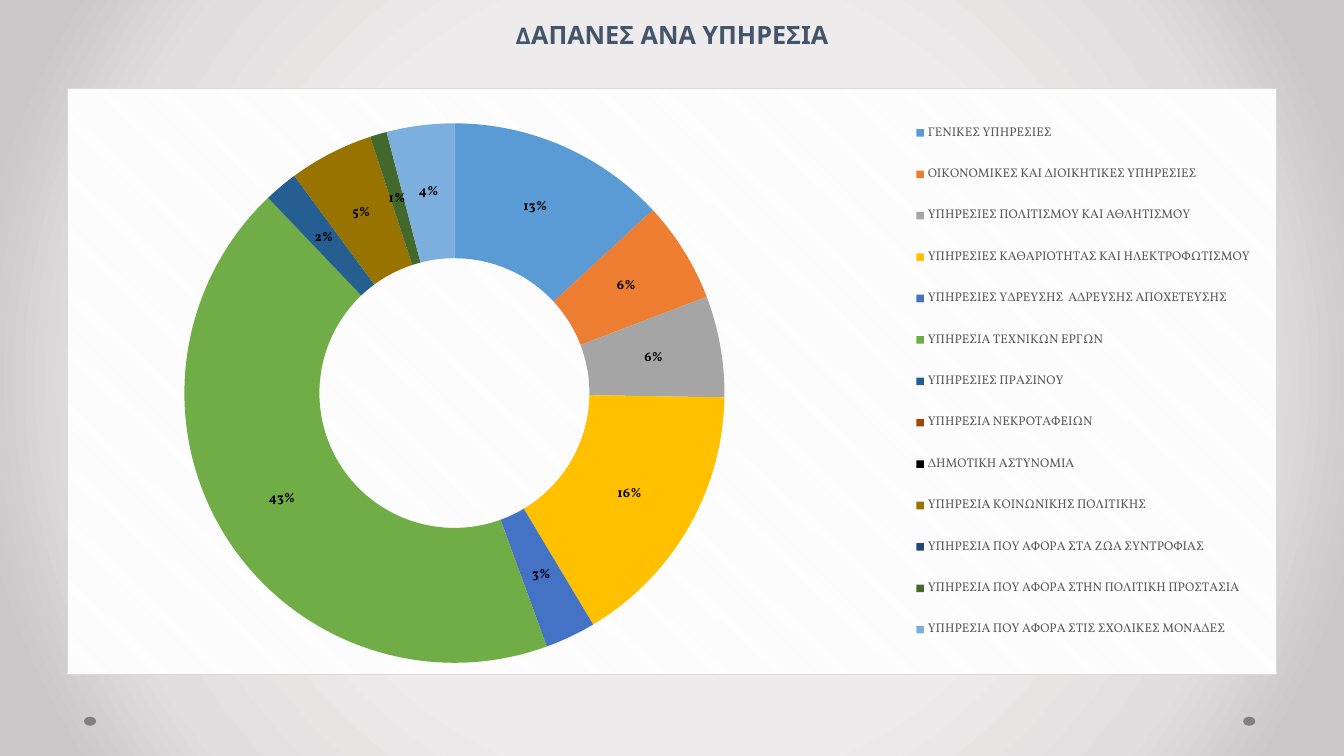
from lxml import etree
from pptx import Presentation
from pptx import util as u
from pptx.chart.data import CategoryChartData
from pptx.dml.color import RGBColor
from pptx.enum import chart as ch, shapes, text
from pptx.oxml import ns, parse_xml

SERVICES = [
    ("ΓΕΝΙΚΕΣ ΥΠΗΡΕΣΙΕΣ", 13, "5B9BD5"),
    ("ΟΙΚΟΝΟΜΙΚΕΣ ΚΑΙ ΔΙΟΙΚΗΤΙΚΕΣ ΥΠΗΡΕΣΙΕΣ", 6, "ED7D31"),
    ("ΥΠΗΡΕΣΙΕΣ ΠΟΛΙΤΙΣΜΟΥ ΚΑΙ ΑΘΛΗΤΙΣΜΟΥ", 6, "A5A5A5"),
    ("ΥΠΗΡΕΣΙΕΣ ΚΑΘΑΡΙΟΤΗΤΑΣ ΚΑΙ ΗΛΕΚΤΡΟΦΩΤΙΣΜΟΥ", 16, "FFC000"),
    ("ΥΠΗΡΕΣΙΕΣ ΥΔΡΕΥΣΗΣ  ΑΔΡΕΥΣΗΣ ΑΠΟΧΕΤΕΥΣΗΣ", 3, "4472C4"),
    ("ΥΠΗΡΕΣΙΑ ΤΕΧΝΙΚΩΝ ΕΡΓΩΝ", 43, "70AD47"),
    ("ΥΠΗΡΕΣΙΕΣ ΠΡΑΣΙΝΟΥ", 2, "255E91"),
    ("ΥΠΗΡΕΣΙΑ ΝΕΚΡΟΤΑΦΕΙΩΝ", 0, "9E480E"),
    ("ΔΗΜΟΤΙΚΗ ΑΣΤΥΝΟΜΙΑ", 0, "000000"),
    ("ΥΠΗΡΕΣΙΑ ΚΟΙΝΩΝΙΚΗΣ ΠΟΛΙΤΙΚΗΣ", 5, "997300"),
    ("ΥΠΗΡΕΣΙΑ ΠΟΥ ΑΦΟΡΑ ΣΤΑ ΖΩΑ ΣΥΝΤΡΟΦΙΑΣ", 0, "264478"),
    ("ΥΠΗΡΕΣΙΑ ΠΟΥ ΑΦΟΡΑ ΣΤΗΝ ΠΟΛΙΤΙΚΗ ΠΡΟΣΤΑΣΙΑ", 1, "43682B"),
    ("ΥΠΗΡΕΣΙΑ ΠΟΥ ΑΦΟΡΑ ΣΤΙΣ ΣΧΟΛΙΚΕΣ ΜΟΝΑΔΕΣ", 4, "7CAFDD"),
]


def color(value):
    return RGBColor.from_string(value)


def xml(tag, body):
    return parse_xml(f'<{tag} {ns.nsdecls("a", "c", "p")}>{body}</{tag}>')


def fill_xml(value):
    return f'<a:srgbClr val="{value}"/>'


def manual_layout(x, y, w, h, inner=False):
    """Chart layout element; lengths are shares of the chart area."""
    target = '<c:layoutTarget val="inner"/>' if inner else ""
    modes = '<c:xMode val="edge"/><c:yMode val="edge"/>'
    sizes = "".join(f'<c:{name} val="{share}"/>'
                    for name, share in zip("xywh", (x, y, w, h)))
    return xml("c:layout", f"<c:manualLayout>{target}{modes}{sizes}</c:manualLayout>")


class ExpenseSlide:
    heading_font, chart_font = "Karla", "Vollkorn"
    heading_color, dot_color = "44546A", "808080"
    legend_color, border_color = "595959", "D9D9D9"

    def __init__(self, deck):
        self.deck = deck
        self.page = deck.slides.add_slide(deck.slide_layouts[5])

    def area(self, left, top, width, height):
        """Turn shares of the slide's size into lengths."""
        wide, high = self.deck.slide_width, self.deck.slide_height
        return int(left * wide), int(top * high), int(width * wide), int(height * high)

    def style(self, font, name, size, value, bold=False):
        font.name, font.size, font.bold = name, u.Pt(size), bold
        font.color.rgb = color(value)

    def background(self, stops):
        stop_xml = "".join(f'<a:gs pos="{share * 1000}">{fill_xml(value)}</a:gs>'
                           for share, value in stops)
        center = '<a:fillToRect l="50000" t="50000" r="50000" b="50000"/>'
        backdrop = xml("p:bg", f'<p:bgPr><a:gradFill rotWithShape="1"><a:gsLst>{stop_xml}'
                       f'</a:gsLst><a:path path="circle">{center}</a:path></a:gradFill>'
                       '<a:effectLst/></p:bgPr>')
        self.page.element.cSld.insert(0, backdrop)

    def dot(self, *shares):
        dot = self.page.shapes.add_shape(shapes.MSO_SHAPE.OVAL, *self.area(*shares))
        dot.shadow.inherit = False
        dot.fill.solid()
        dot.fill.fore_color.rgb = color(self.dot_color)
        dot.line.fill.background()

    def title(self, words, *shares):
        box = self.page.shapes.title
        box.left, box.top, box.width, box.height = self.area(*shares)
        frame = box.text_frame
        frame.text = words
        frame.word_wrap = True
        frame.auto_size = text.MSO_AUTO_SIZE.NONE
        frame.vertical_anchor = text.MSO_ANCHOR.BOTTOM
        para = frame.paragraphs[0]
        para.alignment = text.PP_ALIGN.CENTER
        para.line_spacing = u.Pt(48)
        self.style(para.font, self.heading_font, 18, self.heading_color, True)

    def doughnut(self, rows, *shares):
        data = CategoryChartData()
        data.categories = [name for name, _, _ in rows]
        data.add_series("Series 1", [value for _, value, _ in rows])
        chart = self.page.shapes.add_chart(
            ch.XL_CHART_TYPE.DOUGHNUT, *self.area(*shares), data).chart
        chart.has_title = False
        self.style(chart.font, self.chart_font, 10, "000000")
        self.chart_area(chart)
        self.legend(chart)
        plot = chart.plots[0]
        plot.vary_by_categories = True
        for hole in plot._element.iter(ns.qn("c:holeSize")):
            hole.set("val", "70")
        series = plot.series[0]
        for index, (_, _, value) in enumerate(rows):
            look = series.points[index].format
            look.fill.solid()
            look.fill.fore_color.rgb = color(value)
            look.line.fill.background()
        self.labels(series, [i for i, row in enumerate(rows) if row[1] == 0])

    def chart_area(self, chart):
        """Hatched panel with a thin border, and a fixed ring area."""
        panel = xml("c:spPr", '<a:pattFill prst="dkDnDiag">'
                    f'<a:fgClr>{fill_xml("F2F2F2")}</a:fgClr>'
                    f'<a:bgClr>{fill_xml("FFFFFF")}</a:bgClr></a:pattFill>'
                    f'<a:ln w="9525"><a:solidFill>{fill_xml(self.border_color)}'
                    '</a:solidFill></a:ln>')
        root = chart.element
        root.find(ns.qn("c:chart")).addnext(panel)
        plot_area = root.find(".//" + ns.qn("c:plotArea"))
        for layout in plot_area.findall(ns.qn("c:layout")):
            plot_area.remove(layout)
        plot_area.insert(0, manual_layout(0.02, 0.06, 0.6, 0.92, inner=True))

    def legend(self, chart):
        chart.has_legend = True
        legend = chart.legend
        legend.position = ch.XL_LEGEND_POSITION.RIGHT
        legend.include_in_layout = False
        self.style(legend.font, self.chart_font, 9, self.legend_color)
        element = legend._element
        for layout in element.findall(ns.qn("c:layout")):
            element.remove(layout)
        element.find(ns.qn("c:legendPos")).addnext(manual_layout(0.69, 0.02, 0.3, 0.96))

    def labels(self, series, hidden):
        labels = series.data_labels
        labels.show_value = False
        labels.show_percentage = True
        labels.number_format = "0%"
        labels.number_format_is_linked = False
        self.style(labels.font, self.chart_font, 9.5, "000000", True)
        for place, index in enumerate(hidden):
            labels._element.insert(place, xml(
                "c:dLbl", f'<c:idx val="{index}"/><c:delete val="1"/>'))


def main():
    deck = Presentation()
    deck.slide_width, deck.slide_height = u.Inches(13.33), u.Inches(7.5)
    slide = ExpenseSlide(deck)
    slide.background([(50, "EDEBEB"), (76, "E0DEDE"), (92, "C9C7C7")])
    for left in (0.925, 0.0625):
        slide.dot(left, 0.948, 0.009, 0.012)
    slide.title("ΔΑΠΑΝΕΣ ΑΝΑ ΥΠΗΡΕΣΙΑ", 0.05, 0.019, 0.9, 0.053)
    slide.doughnut(SERVICES, 0.05, 0.116, 0.9, 0.777)
    deck.save("out.pptx")


if __name__ == "__main__":
    main()
